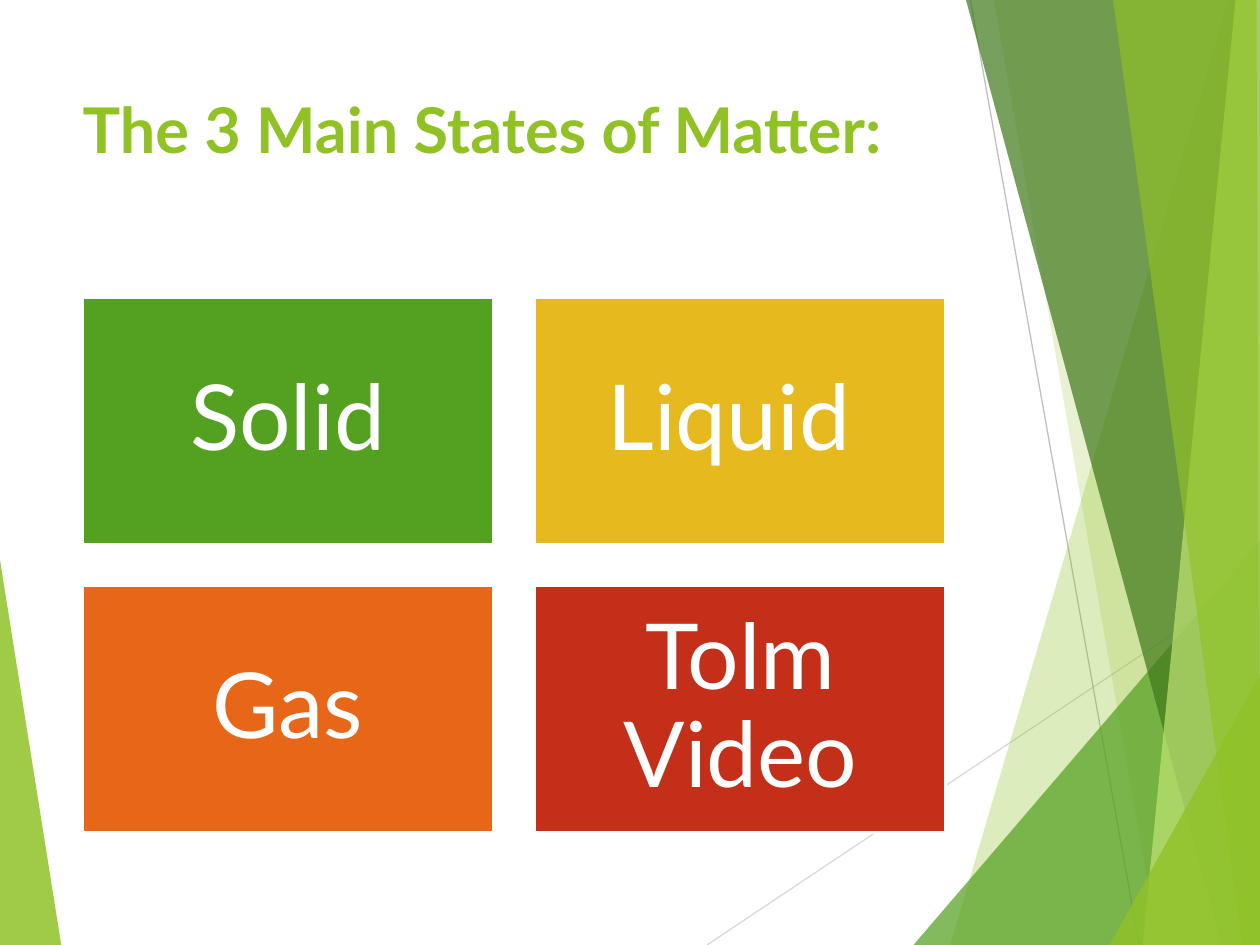
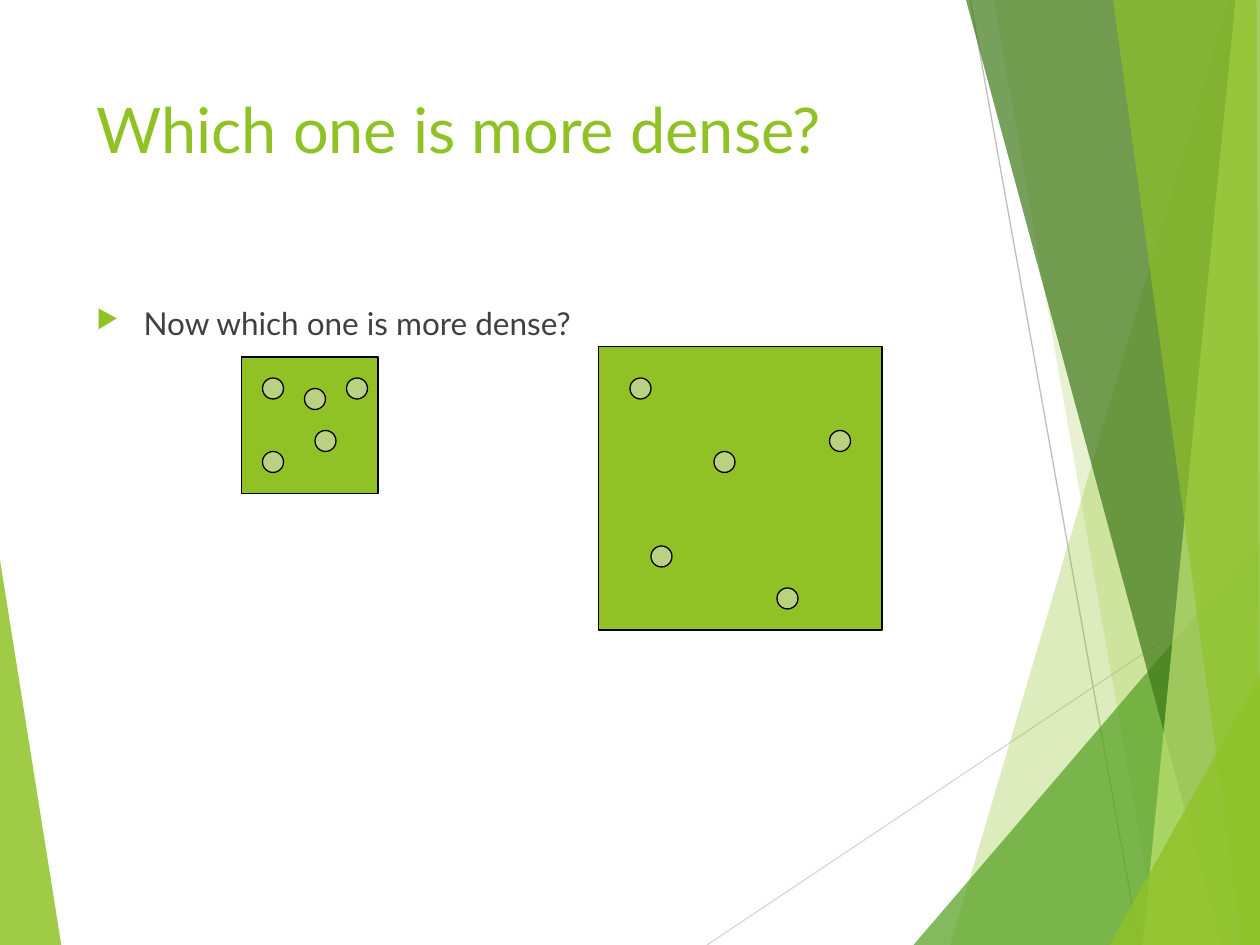
from pptx import Presentation
from pptx.dml.color import RGBColor
from pptx.enum import shapes, text
from pptx.oxml import ns
from pptx.util import Pt
from lxml import etree

HUES = {
    "lime": "90C226", "pale": "C0E474", "green": "54A021", "deep": "3F7819",
    "gold": "E6B91E", "orange": "E76618", "red": "C42F1A", "dot": "B9D181",
    "ink": "404040", "black": "000000", "white": "FFFFFF",
    "mist": "D9D9D9", "grey": "BFBFBF",
}
FACE = "Lato"
WIDE, HIGH = 720, 540
TOP = 170  # top of the content on both slides
UNIT = 6  # grid step and dot radius in the density boxes

# colour, opacity in percent, corners; drawn from back to front
BANDS = [
    ("lime", 30, [(702, 0), (543, HIGH), (WIDE, HIGH), (WIDE, 0)]),
    ("lime", 20, [(567.5, 0), (662, HIGH), (WIDE, HIGH), (WIDE, 0)]),
    ("green", 72, [(522.5, HIGH), (WIDE, 309), (WIDE, HIGH)]),
    ("deep", 70, [(552.5, 0), (698.5, HIGH), (WIDE, HIGH), (WIDE, 0)]),
    ("pale", 70, [(706, 0), (653, HIGH), (WIDE, HIGH), (WIDE, 0)]),
    ("lime", 65, [(636, 0), (709.5, HIGH), (WIDE, HIGH), (718.5, 0)]),
    ("lime", 80, [(634.5, HIGH), (WIDE, 386), (WIDE, HIGH)]),
]
WEDGE = ("lime", 85, [(0, 320), (35, HIGH), (0, HIGH)])
RAYS = [("mist", (404, HIGH), (WIDE, 329)), ("grey", (554.5, 0), (651, HIGH))]

CARDS = [("Solid", "green"), ("Liquid ", "gold"),
         ("Gas", "orange"), ("Tolm Video", "red")]

# left, top, side in points; dot places in grid steps from the box corner
BOXES = [
    (138, 204, 78, [(2, 2), (6, 3), (2, 9), (7, 7), (10, 2)]),
    (342, 198, 162, [(3, 3), (11, 10), (5, 19), (17, 23), (22, 8)]),
]


def hue(name):
    return RGBColor.from_string(HUES[name])


def pen(font, size, name, bold=False):
    font.name, font.size, font.bold = FACE, Pt(size), bold
    font.color.rgb = hue(name)


def band(slide, name, alpha, spots):
    """Draw one see-through polygon without an outline."""
    form = slide.shapes.build_freeform(*spots[0], scale=Pt(1))
    form.add_line_segments(spots[1:], close=True)
    shape = form.convert_to_shape()
    shape.shadow.inherit = False
    shape.fill.solid()
    shape.fill.fore_color.rgb = hue(name)
    shape.line.fill.background()
    tint = shape.element.spPr.find(".//" + ns.qn("a:srgbClr"))
    etree.SubElement(tint, ns.qn("a:alpha"), val=str(alpha * 1000))
    return shape


def ray(slide, name, start, end):
    line = slide.shapes.add_connector(
        shapes.MSO_CONNECTOR.STRAIGHT, *map(Pt, start + end))
    line.line.color.rgb = hue(name)
    line.line.width = Pt(0.75)
    etree.SubElement(line.element.spPr, ns.qn("a:effectLst"))
    return line


def dress(slide, layout):
    """Draw the shared backdrop and move it to the layout."""
    parts = [band(slide, *WEDGE)]
    parts += [ray(slide, *item) for item in RAYS]
    parts += [band(slide, *item) for item in BANDS]
    for part in parts:
        layout.shapes.element.append(part.element)


def head(slide, words, left, bold=False):
    title = slide.shapes.title
    title.left, title.top = Pt(left), Pt(48)
    title.width, title.height = Pt(548 - left), Pt(101.5)
    frame = title.text_frame
    frame.text = words
    frame.auto_size = text.MSO_AUTO_SIZE.NONE
    frame.vertical_anchor = text.MSO_ANCHOR.TOP
    line = frame.paragraphs[0]
    line.alignment = text.PP_ALIGN.LEFT
    pen(line.font, 36, "lime", bold)


def block(slide, kind, place, fill, edge, width):
    shape = slide.shapes.add_shape(kind, *map(Pt, place))
    shape.shadow.inherit = False
    shape.fill.solid()
    shape.fill.fore_color.rgb = hue(fill)
    shape.line.color.rgb = hue(edge)
    shape.line.width = Pt(width)
    return shape


def card(slide, words, name, left, top):
    shape = block(slide, shapes.MSO_SHAPE.RECTANGLE, (left, top, 234.75, 141),
                  name, "white", 1.5)
    frame = shape.text_frame
    frame.word_wrap = True
    frame.vertical_anchor = text.MSO_ANCHOR.MIDDLE
    frame.margin_left = frame.margin_right = Pt(15.6)
    frame.margin_top = frame.margin_bottom = Pt(15.6)
    frame.text = words
    line = frame.paragraphs[0]
    line.alignment = text.PP_ALIGN.CENTER
    line.line_spacing = 0.9
    pen(line.font, 52, "white")


def point(slide, words):
    """Add a text box with one bulleted line."""
    box = slide.shapes.add_textbox(Pt(48), Pt(TOP), Pt(500), Pt(305))
    frame = box.text_frame
    frame.word_wrap = True
    frame.text = words
    line = frame.paragraphs[0]
    pen(line.font, 18, "ink")
    props = line._p.get_or_add_pPr()
    props.set("marL", str(Pt(27)))
    props.set("indent", str(-Pt(27)))
    tint = etree.Element(ns.qn("a:buClr"))
    etree.SubElement(tint, ns.qn("a:srgbClr"), val=HUES["lime"])
    size = etree.Element(ns.qn("a:buSzPct"), val="80000")
    mark = etree.Element(ns.qn("a:buChar"), char="▶")
    props.extend([tint, size, mark])


def dots(slide, left, top, side, spots):
    """Draw a square with particles in it."""
    block(slide, shapes.MSO_SHAPE.RECTANGLE, (left, top, side, side),
          "lime", "black", 0.75)
    for col, row in spots:
        place = (left + col * UNIT, top + row * UNIT, 2 * UNIT, 2 * UNIT)
        block(slide, shapes.MSO_SHAPE.OVAL, place, "dot", "black", 0.75)


def main():
    deck = Presentation()
    deck.slide_width, deck.slide_height = Pt(WIDE), Pt(HIGH)
    layout = deck.slide_layouts.get_by_name("Title Only")

    states = deck.slides.add_slide(layout)
    dress(states, layout)
    head(states, "The 3 Main States of Matter:", 40, bold=True)
    for spot, (words, name) in enumerate(CARDS):
        row, col = divmod(spot, 2)
        card(states, words, name, 47 + col * 258.75, TOP + row * 164.75)

    dense = deck.slides.add_slide(layout)
    head(dense, "Which one is more dense?", 48)
    point(dense, "Now which one is more dense?")
    for box in BOXES:
        dots(dense, *box)

    deck.save("out.pptx")


if __name__ == "__main__":
    main()
